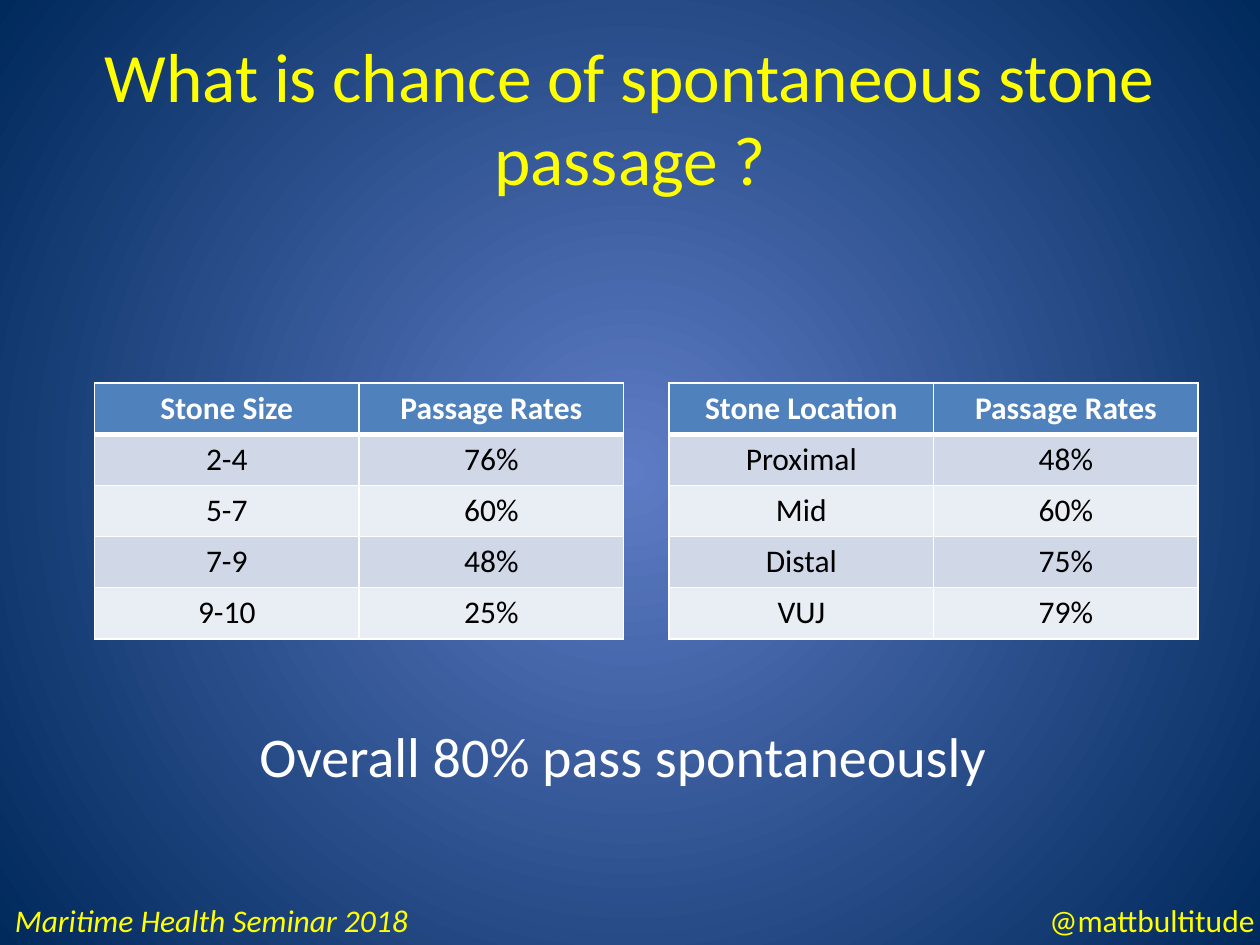
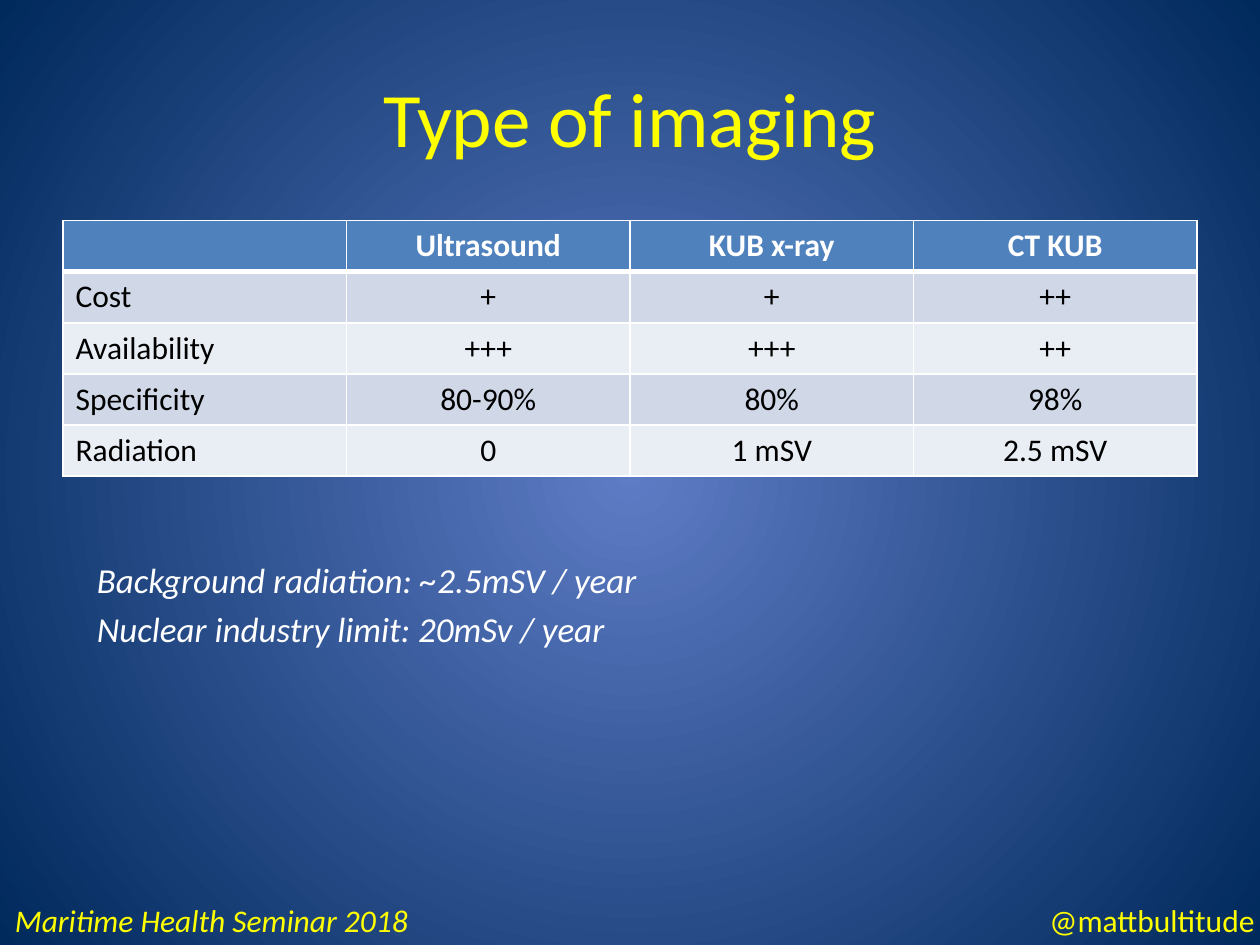
from lxml import etree
from pptx import Presentation
from pptx.dml.color import RGBColor
from pptx.enum.text import MSO_ANCHOR, PP_ALIGN
from pptx.oxml.ns import qn
from pptx.util import Inches, Pt

FONT = "Calibri"
COLORS = {
    "glow": "5E7CC5",
    "navy": "00295C",
    "yellow": "FFFF00",
    "white": "FFFFFF",
    "black": "000000",
    "header": "4F81BD",
    "band_dark": "D0D8E8",
    "band_light": "E9EDF4",
}
ROW_HEIGHT = 2.03 / 5

SIZE_RATES = [
    ("Stone Size", "Passage Rates"),
    ("2-4", "76%"),
    ("5-7", "60%"),
    ("7-9", "48%"),
    ("9-10", "25%"),
]
LOCATION_RATES = [
    ("Stone Location", "Passage Rates"),
    ("Proximal", "48%"),
    ("Mid", "60%"),
    ("Distal", "75%"),
    ("VUJ", "79%"),
]
IMAGING = [
    ("", "Ultrasound", "KUB x-ray", "CT KUB"),
    ("Cost", "+", "+", "++"),
    ("Availability", "+++", "+++", "++"),
    ("Specificity", "80-90%", "80%", "98%"),
    ("Radiation", "0", "1 mSV", "2.5 mSV"),
]


def rgb(name):
    return RGBColor.from_string(COLORS[name])


def write(frame, text, size=18, color="white", bold=False, italic=False,
          align=PP_ALIGN.LEFT, space_before=0):
    """Fill a text frame, one paragraph for each line of text."""
    frame.text = text
    for paragraph in frame.paragraphs:
        paragraph.alignment = align
        paragraph.space_before = Pt(space_before)
        for run in paragraph.runs:
            font = run.font
            font.name, font.size = FONT, Pt(size)
            font.bold, font.italic = bold, italic
            font.color.rgb = rgb(color)


def add_text(slide, text, left, top, width, height,
             anchor=MSO_ANCHOR.TOP, **text_format):
    box = slide.shapes.add_textbox(
        Inches(left), Inches(top), Inches(width), Inches(height))
    box.text_frame.word_wrap = True
    box.text_frame.vertical_anchor = anchor
    write(box.text_frame, text, **text_format)


def paint_background(slide):
    """Radial glow from the slide centre to navy corners."""
    fill = slide.background.fill
    fill.gradient()
    for stop, color in zip(fill.gradient_stops, ("glow", "navy")):
        stop.color.rgb = rgb(color)
    gradient = slide._element.find(".//" + qn("a:gradFill"))
    linear = gradient.find(qn("a:lin"))
    circle = etree.Element(qn("a:path"), path="circle")
    etree.SubElement(circle, qn("a:fillToRect"),
                     l="50000", t="50000", r="50000", b="50000")
    gradient.replace(linear, circle)


def add_themed_slide(deck, title, title_size):
    """Slide with the shared background, title and footers."""
    slide = deck.slides.add_slide(deck.slide_layouts[6])
    paint_background(slide)
    add_text(slide, title, 0.5, 0.3, 9, 1.25, anchor=MSO_ANCHOR.MIDDLE,
             size=title_size, color="yellow", align=PP_ALIGN.CENTER)
    add_text(slide, "@mattbultitude", 8.23, 7.1, 1.89, 0.4, color="yellow")
    add_text(slide, "Maritime Health Seminar 2018", 0.02, 7.1, 3.64, 0.4,
             color="yellow", italic=True)
    return slide


def add_borders(cell, top, bottom):
    """White cell borders; call before the cell gets its fill."""
    properties = cell._tc.get_or_add_tcPr()
    widths = {"a:lnL": 1, "a:lnR": 1, "a:lnT": top, "a:lnB": bottom}
    for side, width in widths.items():
        line = etree.SubElement(properties, qn(side), w=str(Pt(width)))
        solid = etree.SubElement(line, qn("a:solidFill"))
        etree.SubElement(solid, qn("a:srgbClr"), val=COLORS["white"])


def add_banded_table(slide, rows, left, top, column_width, label_align):
    columns = len(rows[0])
    table = slide.shapes.add_table(
        len(rows), columns, Inches(left), Inches(top),
        Inches(column_width * columns), Inches(ROW_HEIGHT * len(rows))).table
    for column in table.columns:
        column.width = Inches(column_width)
    for r, row in enumerate(rows):
        table.rows[r].height = Inches(ROW_HEIGHT)
        is_header = r == 0
        band = "header" if is_header else "band_dark" if r % 2 else "band_light"
        for c, value in enumerate(row):
            cell = table.cell(r, c)
            add_borders(cell, top=3 if r == 1 else 1, bottom=3 if is_header else 1)
            cell.fill.solid()
            cell.fill.fore_color.rgb = rgb(band)
            is_label = c == 0 and not is_header
            write(cell.text_frame, value, bold=is_header,
                  color="white" if is_header else "black",
                  align=label_align if is_label else PP_ALIGN.CENTER)


def add_passage_slide(deck):
    slide = add_themed_slide(
        deck, "What is chance of spontaneous stone passage ?", 39.6)
    add_text(slide, "Overall 80% pass spontaneously", 0.49, 5.68, 8.91, 0.64,
             size=32, align=PP_ALIGN.CENTER)
    for rates, left in ((SIZE_RATES, 0.75), (LOCATION_RATES, 5.31)):
        add_banded_table(slide, rates, left, 3.04, 2.1, PP_ALIGN.CENTER)


def add_imaging_slide(deck):
    slide = add_themed_slide(deck, "Type of imaging", 44)
    add_banded_table(slide, IMAGING, 0.5, 1.75, 2.25, PP_ALIGN.LEFT)
    add_text(slide,
             "Background radiation: ~2.5mSV / year\n"
             "Nuclear industry limit: 20mSv / year",
             0.67, 4.38, 9, 1.57, size=20, italic=True, space_before=4)


def main():
    deck = Presentation()
    deck.slide_width, deck.slide_height = Inches(10), Inches(7.5)
    add_passage_slide(deck)
    add_imaging_slide(deck)
    deck.save("out.pptx")


if __name__ == "__main__":
    main()
